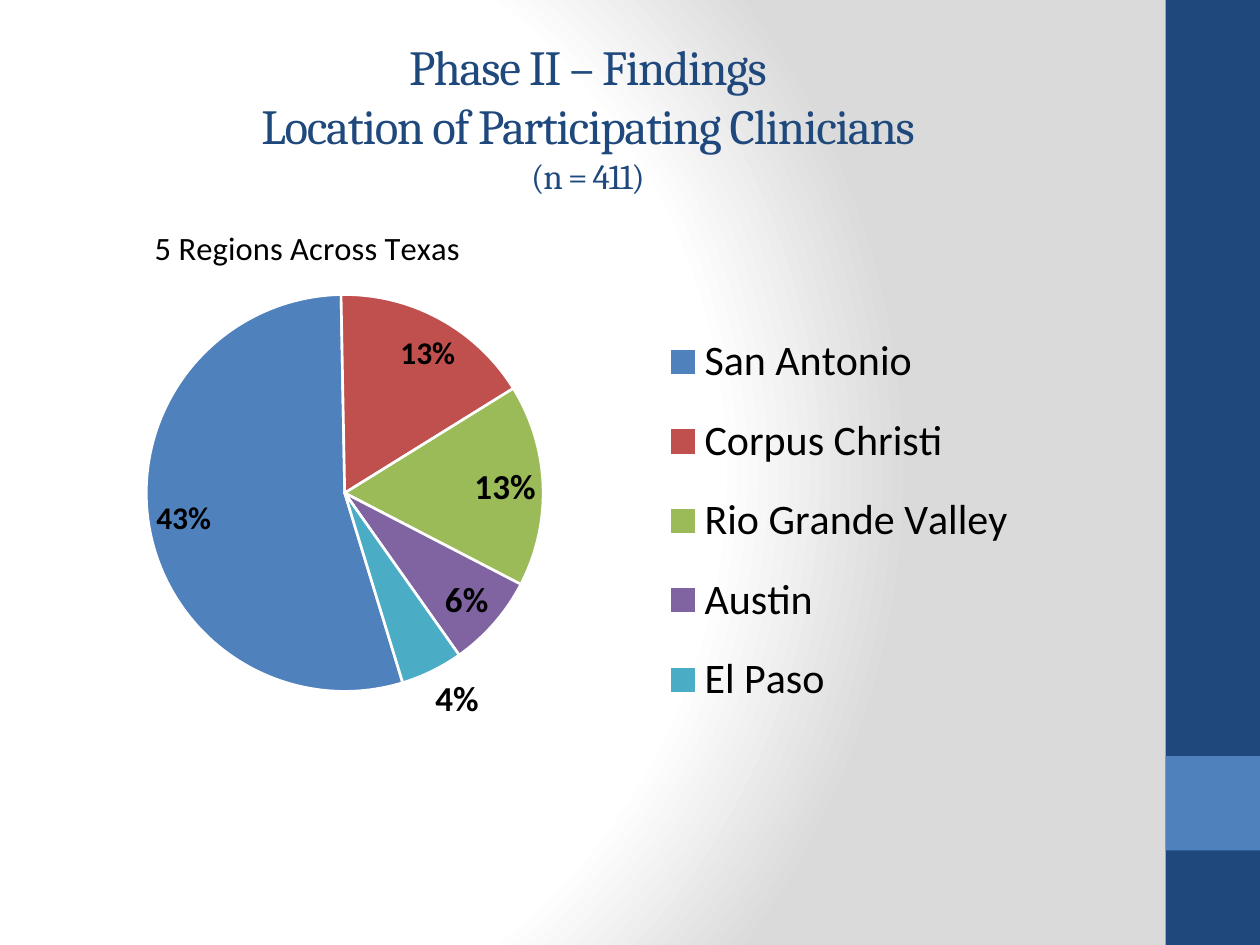
import pptx
import pptx.chart.data
import pptx.dml.color
import pptx.enum.chart
import pptx.enum.shapes
import pptx.enum.text
import pptx.oxml
import pptx.oxml.ns
import pptx.util
from lxml import etree

Pt = pptx.util.Pt

HEADING = [("Phase II – Findings", 28),
           ("Location of Participating Clinicians", 28),
           ("(n = 411)", 20)]
CHART_TITLE = "5 Regions Across Texas"
REGIONS = [("San Antonio", 0.43, "blue", 18),
           ("Corpus Christi", 0.13, "red", 18),
           ("Rio Grande Valley", 0.13, "green", 20),
           ("Austin", 0.06, "purple", 20),
           ("El Paso", 0.04, "teal", 20)]
COLORS = {"navy": "1F497D", "blue": "4F81BD", "red": "C0504D", "green": "9BBB59",
          "purple": "8064A2", "teal": "4BACC6", "black": "000000", "white": "FFFFFF",
          "grey": "DADADA"}
BACKDROP_STOPS = [(0, "white"), (75, "white"), (100, "grey")]
SIDE_BARS = [(666, 0, 54, 540, "navy"), (666, 432, 54, 54, "blue")]
CHART_WIDTH, CHART_HEIGHT = 624.24, 373.68


def rgb(name):
    return pptx.dml.color.RGBColor.from_string(COLORS[name])


def style_font(font, face, size, color, bold=False):
    font.name, font.size, font.bold = face, Pt(size), bold
    font.color.rgb = rgb(color)


def paint_backdrop(slide):
    """Give the slide a circular gradient centred towards the left."""
    slide.background.fill.solid()
    properties = slide.element.find(".//" + pptx.oxml.ns.qn("p:bgPr"))
    stops = "".join(f'<a:gs pos="{at * 1000}"><a:srgbClr val="{COLORS[color]}"/></a:gs>'
                    for at, color in BACKDROP_STOPS)
    gradient = pptx.oxml.parse_xml(
        f'<a:gradFill {pptx.oxml.ns.nsdecls("a")} rotWithShape="1"><a:gsLst>{stops}</a:gsLst>'
        '<a:path path="circle"><a:fillToRect l="20000" t="50000" r="100000" b="50000"/>'
        '</a:path></a:gradFill>')
    properties.replace(properties[0], gradient)


def place(element, after, inner=False, **points):
    """Set a manual layout, in points within the chart, behind the child named after."""
    for old in element.findall(pptx.oxml.ns.qn("c:layout")):
        element.remove(old)
    layout = etree.Element(pptx.oxml.ns.qn("c:layout"))
    manual = etree.SubElement(layout, pptx.oxml.ns.qn("c:manualLayout"))
    settings = [("layoutTarget", "inner")] if inner else []
    settings += [("xMode", "edge"), ("yMode", "edge")]
    settings += [(tag, length / (CHART_WIDTH if tag in "xw" else CHART_HEIGHT))
                 for tag, length in points.items()]
    for tag, value in settings:
        etree.SubElement(manual, pptx.oxml.ns.qn("c:" + tag)).set("val", str(value))
    if after:
        element.find(pptx.oxml.ns.qn(after)).addnext(layout)
    else:
        element.insert(0, layout)


def add_heading(slide):
    frame = slide.shapes.add_textbox(Pt(36), Pt(21.6), Pt(600), Pt(90)).text_frame
    frame.word_wrap = True
    frame.vertical_anchor = pptx.enum.text.MSO_ANCHOR.MIDDLE
    frame.text = "\n".join(line for line, size in HEADING)
    for paragraph, (line, size) in zip(frame.paragraphs, HEADING):
        paragraph.alignment = pptx.enum.text.PP_ALIGN.CENTER
        run = paragraph.runs[0]
        style_font(run.font, "Cambria", size, "navy")
        run.font._element.set("spc", "-75")


def add_region_pie(slide):
    shares = pptx.chart.data.CategoryChartData(number_format="0%")
    shares.categories = [region for region, *rest in REGIONS]
    shares.add_series("Series 1", [share for region, share, *rest in REGIONS])
    chart = slide.shapes.add_chart(pptx.enum.chart.XL_CHART_TYPE.PIE, Pt(36), Pt(102.24),
                                   Pt(CHART_WIDTH), Pt(CHART_HEIGHT), shares).chart
    style_font(chart.font, "Calibri", 10, "black")

    chart.has_title = True
    title = chart.chart_title
    title.text_frame.text = CHART_TITLE
    style_font(title.text_frame.paragraphs[0].runs[0].font, "Calibri", 18.6, "black")
    title.include_in_layout = False
    place(title._element, "c:tx", x=49, y=22.9)

    chart.has_legend = True
    legend = chart.legend
    legend.position = pptx.enum.chart.XL_LEGEND_POSITION.RIGHT
    legend.include_in_layout = False
    style_font(legend.font, "Calibri", 24, "black")
    place(legend._element, "c:legendPos", x=312.4, y=74, w=262, h=243)

    pie = chart.plots[0]
    pie.vary_by_categories = True
    angle = pie._element.find(pptx.oxml.ns.qn("c:firstSliceAng"))
    if angle is None:
        angle = etree.SubElement(pie._element, pptx.oxml.ns.qn("c:firstSliceAng"))
    angle.set("val", "163")
    place(chart._chartSpace.chart.plotArea, None, inner=True, x=47.4, y=66.1, w=227.2, h=226.8)

    best_fit = pptx.enum.chart.XL_LABEL_POSITION.BEST_FIT
    series = pie.series[0]
    labels = series.data_labels
    labels.show_value = True
    labels.number_format, labels.number_format_is_linked = "0%", False
    labels.position = best_fit
    style_font(labels.font, "Calibri", 20, "black", bold=True)
    for index, (region, share, color, label_size) in enumerate(REGIONS):
        point = series.points[index]
        point.format.fill.solid()
        point.format.fill.fore_color.rgb = rgb(color)
        point.format.line.color.rgb = rgb("white")
        point.format.line.width = Pt(1.5)
        if label_size != 20:
            style_font(point.data_label.font, "Calibri", label_size, "black", bold=True)
            point.data_label.position = best_fit


def main():
    deck = pptx.Presentation()
    deck.slide_width, deck.slide_height = Pt(720), Pt(540)
    slide = deck.slides.add_slide(deck.slide_layouts[6])
    paint_backdrop(slide)
    for left, top, width, height, color in SIDE_BARS:
        bar = slide.shapes.add_shape(pptx.enum.shapes.MSO_SHAPE.RECTANGLE,
                                     Pt(left), Pt(top), Pt(width), Pt(height))
        bar.shadow.inherit = False
        bar.fill.solid()
        bar.fill.fore_color.rgb = rgb(color)
        bar.line.fill.background()
    add_heading(slide)
    add_region_pie(slide)
    deck.save("out.pptx")


if __name__ == "__main__":
    main()
